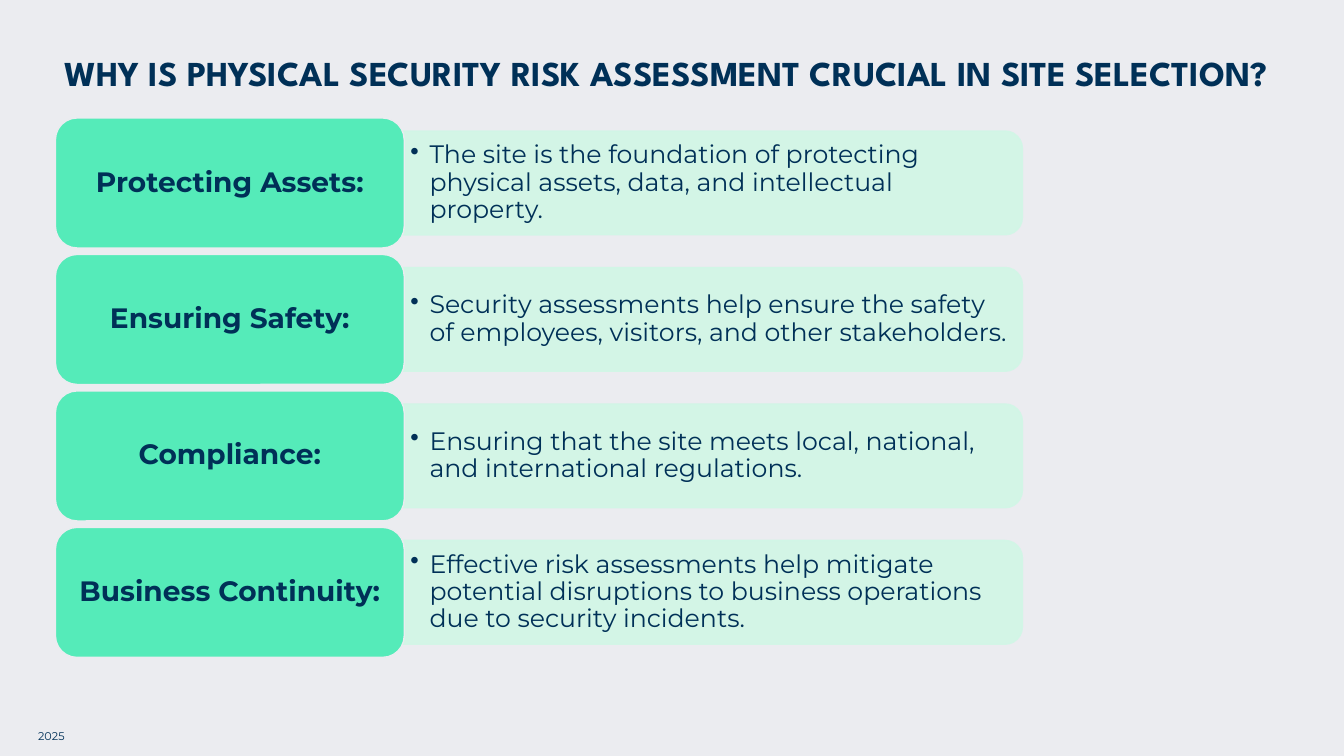
from lxml.etree import SubElement
from pptx import Presentation
from pptx.dml.color import RGBColor
from pptx.enum.shapes import MSO_SHAPE
from pptx.enum.text import MSO_ANCHOR, MSO_AUTO_SIZE, PP_ALIGN
from pptx.oxml.ns import qn
from pptx.util import Inches, Pt

COLORS = {"background": "EBECF0", "navy": "003057", "green": "55EBB9", "mint": "D1F7E6"}
REASONS = [
    ("Protecting Assets:",
     "The site is the foundation of protecting physical assets, data, and intellectual property."),
    ("Ensuring Safety:",
     "Security assessments help ensure the safety of employees, visitors, and other stakeholders."),
    ("Compliance:",
     "Ensuring that the site meets local, national, and international regulations."),
    ("Business Continuity:",
     "Effective risk assessments help mitigate potential disruptions to business operations due to security incidents."),
]
FIRST_TOP, ROW_STEP = 1.17, 1.354
CARD_LEFT, CARD_WIDTH, CARD_HEIGHT = 0.55, 3.46, 1.29
BAND_LEFT, BAND_WIDTH, BAND_HEIGHT = 4.0, 6.14, 1.03


def color(name):
    """Return a palette colour."""
    return RGBColor.from_string(COLORS[name])


def set_frame(frame, anchor, horizontal, vertical):
    """Set wrapping, anchor and insets of a text frame."""
    frame.word_wrap = True
    frame.auto_size = MSO_AUTO_SIZE.NONE
    frame.vertical_anchor = anchor
    frame.margin_left = frame.margin_right = Inches(horizontal)
    frame.margin_top = frame.margin_bottom = Inches(vertical)


def write(paragraph, text, size, font="Montserrat", bold=False, align=PP_ALIGN.LEFT):
    """Add one formatted run to a paragraph."""
    paragraph.alignment = align
    paragraph.line_spacing = 0.9
    run = paragraph.add_run()
    run.text = text
    run.font.name = font
    run.font.size = Pt(size)
    run.font.bold = bold
    run.font.color.rgb = color("navy")


def add_bullet(paragraph):
    """Give a paragraph a hanging round bullet."""
    properties = paragraph._p.get_or_add_pPr()
    properties.set("marL", str(Inches(0.19)))
    properties.set("indent", str(-Inches(0.19)))
    SubElement(properties, qn("a:buChar")).set("char", "•")


def add_panel(slide, kind, left, top, width, height, fill, line):
    """Add a filled and outlined shape without shadow."""
    shape = slide.shapes.add_shape(kind, Inches(left), Inches(top), Inches(width), Inches(height))
    shape.shadow.inherit = False
    shape.fill.solid()
    shape.fill.fore_color.rgb = color(fill)
    shape.line.color.rgb = color(line)
    shape.line.width = Pt(1)
    return shape


def set_opacity(shape, percent):
    """Make the fill and line of a shape translucent."""
    for element in shape._element.spPr.iter(qn("a:srgbClr")):
        SubElement(element, qn("a:alpha")).set("val", str(percent * 1000))


def add_band(slide, middle, text):
    """Add the pale band and its bulleted explanation."""
    center = BAND_LEFT + BAND_WIDTH / 2
    band = add_panel(slide, MSO_SHAPE.ROUND_2_SAME_RECTANGLE, center - BAND_HEIGHT / 2,
                     middle - BAND_WIDTH / 2, BAND_HEIGHT, BAND_WIDTH, "mint", "mint")
    band.rotation = 90
    set_opacity(band, 90)
    box = slide.shapes.add_textbox(Inches(BAND_LEFT), Inches(middle - 0.465), Inches(6.09), Inches(0.93))
    set_frame(box.text_frame, MSO_ANCHOR.MIDDLE, 0.07, 0.04)
    paragraph = box.text_frame.paragraphs[0]
    add_bullet(paragraph)
    write(paragraph, text, 18)


def add_card(slide, top, text):
    """Add the green card that names a reason."""
    card = add_panel(slide, MSO_SHAPE.ROUNDED_RECTANGLE, CARD_LEFT, top,
                     CARD_WIDTH, CARD_HEIGHT, "green", "background")
    set_frame(card.text_frame, MSO_ANCHOR.MIDDLE, 0.08, 0.04)
    write(card.text_frame.paragraphs[0], text, 20, bold=True, align=PP_ALIGN.CENTER)


def add_title(slide, text):
    """Place and format the slide title."""
    title = slide.shapes.title
    title.left, title.top, title.width, title.height = map(Inches, (0.54, 0.51, 12.26, 0.66))
    set_frame(title.text_frame, MSO_ANCHOR.TOP, 0.1, 0.05)
    write(title.text_frame.paragraphs[0], text, 25, font="League Spartan", bold=True)


def add_year(slide, text):
    """Add the small year in the lower left corner."""
    box = slide.shapes.add_textbox(Inches(0.28), Inches(7.19), Inches(2.62), Inches(0.24))
    set_frame(box.text_frame, MSO_ANCHOR.TOP, 0.1, 0.05)
    paragraph = box.text_frame.paragraphs[0]
    write(paragraph, text, 8)
    paragraph.line_spacing = 1.0


def main():
    """Build and save the slide."""
    presentation = Presentation()
    presentation.slide_width = Inches(13.33)
    presentation.slide_height = Inches(7.5)
    slide = presentation.slides.add_slide(presentation.slide_layouts[5])
    slide.background.fill.solid()
    slide.background.fill.fore_color.rgb = color("background")
    add_year(slide, "2025")
    add_title(slide, "WHY IS PHYSICAL SECURITY RISK ASSESSMENT CRUCIAL IN SITE SELECTION?")
    for row, (name, explanation) in enumerate(REASONS):
        top = FIRST_TOP + row * ROW_STEP
        add_band(slide, top + CARD_HEIGHT / 2, explanation)
        add_card(slide, top, name)
    presentation.save("out.pptx")


if __name__ == "__main__":
    main()
